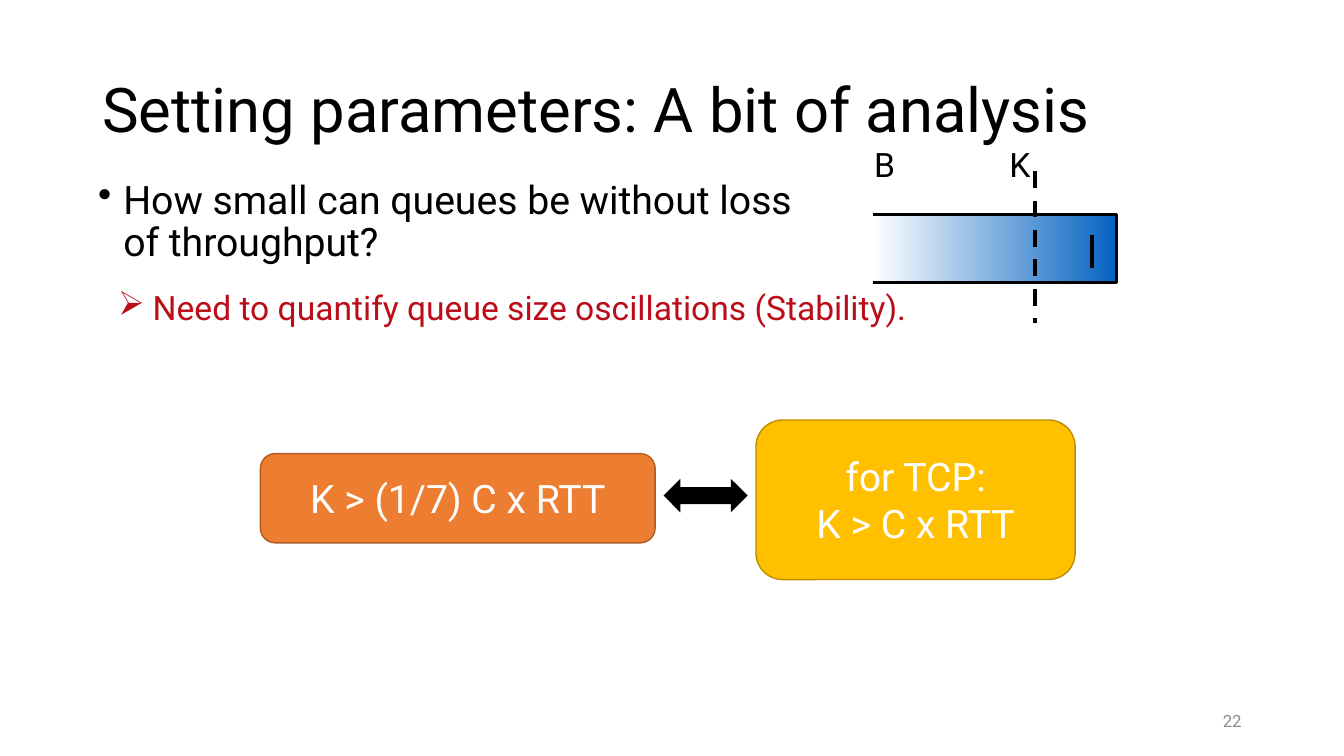
from dataclasses import dataclass, field
from typing import Any

from lxml import etree
from pptx import Presentation
from pptx import util as u
from pptx.dml.color import RGBColor
from pptx.enum import dml, shapes, text
from pptx.oxml.ns import qn

PX = 9525
FONT = "Roboto"
COLORS = {
    "black": "000000",
    "white": "FFFFFF",
    "gray": "8C8C8C",
    "red": "BB0D18",
    "blue": "0563C1",
    "orange": "ED7D31",
    "orange_edge": "AF5C24",
    "gold": "FFC000",
    "gold_edge": "BD8E00",
}


@dataclass
class Label:
    box: tuple[int, int, int, int]
    lines: list[str]
    size: int
    color: str = "black"
    frame: dict[str, Any] = field(default_factory=dict)
    format: dict[str, Any] = field(default_factory=dict)
    bullet: str = ""
    indent: int = 0


@dataclass
class Block:
    kind: shapes.MSO_SHAPE
    fill: str
    edge: str
    label: Label


@dataclass
class Stroke:
    start: tuple[int, int]
    end: tuple[int, int]
    width: float
    dash: dml.MSO_LINE | None = None


MIDDLE = {"vertical_anchor": text.MSO_ANCHOR.MIDDLE}
UNWRAPPED = {"word_wrap": False}
CENTER = {"alignment": text.PP_ALIGN.CENTER}
TIGHT = {"line_spacing": 0.9}

BLOCKS = [
    Block(shapes.MSO_SHAPE.ROUNDED_RECTANGLE, "orange", "orange_edge",
          Label((248, 432, 376, 85), ["K > (1/7) C x RTT"], 28, "white", MIDDLE, CENTER)),
    Block(shapes.MSO_SHAPE.ROUNDED_RECTANGLE, "gold", "gold_edge",
          Label((720, 400, 304, 152), ["for TCP:", "K > C x RTT"], 28, "white", MIDDLE, CENTER)),
    Block(shapes.MSO_SHAPE.LEFT_RIGHT_ARROW, "black", "",
          Label((632, 456, 80, 32), [], 28)),
]
LABELS = [
    Label((904, 667, 288, 38), ["22"], 12, "gray", MIDDLE,
          {"alignment": text.PP_ALIGN.RIGHT}),
    Label((88, 38, 1104, 139), ["Setting parameters: A bit of analysis"], 44,
          frame=MIDDLE, format=TIGHT),
    Label((823, 132, 38, 48), ["B"], 24, frame=UNWRAPPED),
    Label((952, 132, 38, 48), ["K"], 24, frame=UNWRAPPED),
    Label((84, 167, 703, 176), ["How small can queues be without loss of throughput?"], 28,
          format=TIGHT | {"space_before": u.Pt(10)}, bullet="•", indent=24),
    Label((103, 269, 809, 48), ["Need to quantify queue size oscillations (Stability)."], 24,
          "red", bullet="➢", indent=33),
]
QUEUE_OUTLINE = [(831, 204), (1063, 204), (1063, 269), (831, 269)]
STROKES = [
    Stroke((1040, 224), (1040, 255), 2.25),
    Stroke((986, 163), (986, 308), 3, dml.MSO_LINE.DASH),
]


def rgb(name: str) -> RGBColor:
    return RGBColor.from_string(COLORS[name])


def emu(lengths: tuple[int, ...]) -> list[int]:
    return [length * PX for length in lengths]


def apply(target: Any, values: dict[str, Any]) -> None:
    for name, value in values.items():
        setattr(target, name, value)


def set_line(line: Any, color: str, width: float) -> None:
    line.color.rgb = rgb(color)
    line.width = u.Pt(width)


def write(shape: Any, label: Label) -> None:
    frame = shape.text_frame
    apply(frame, {"word_wrap": True} | label.frame)
    for index, line in enumerate(label.lines):
        paragraph = frame.add_paragraph() if index else frame.paragraphs[0]
        run = paragraph.add_run()
        run.text = line
        apply(run.font, {"name": FONT, "size": u.Pt(label.size)})
        run.font.color.rgb = rgb(label.color)
        apply(paragraph, label.format)
        if label.bullet:
            properties = paragraph._p.get_or_add_pPr()
            properties.set("marL", str(label.indent * PX))
            properties.set("indent", str(-label.indent * PX))
            etree.SubElement(properties, qn("a:buChar")).set("char", label.bullet)


def draw_block(slide: Any, block: Block) -> None:
    shape = slide.shapes.add_shape(block.kind, *emu(block.label.box))
    shape.shadow.inherit = False
    shape.fill.solid()
    shape.fill.fore_color.rgb = rgb(block.fill)
    if block.edge:
        set_line(shape.line, block.edge, 1)
    else:
        shape.line.fill.background()
    write(shape, block.label)


def draw_queue(slide: Any) -> None:
    builder = slide.shapes.build_freeform(*QUEUE_OUTLINE[0], scale=PX)
    builder.add_line_segments(QUEUE_OUTLINE[1:], close=False)
    queue = builder.convert_to_shape()
    queue.shadow.inherit = False
    queue.fill.gradient()
    queue.fill.gradient_angle = 0
    for stop, color in zip(queue.fill.gradient_stops, ("white", "blue")):
        stop.color.rgb = rgb(color)
    set_line(queue.line, "black", 2.25)


def draw_stroke(slide: Any, stroke: Stroke) -> None:
    connector = slide.shapes.add_connector(
        shapes.MSO_CONNECTOR.STRAIGHT, *emu(stroke.start + stroke.end))
    set_line(connector.line, "black", stroke.width)
    if stroke.dash:
        connector.line.dash_style = stroke.dash
    etree.SubElement(connector._element.spPr, qn("a:effectLst"))


def main() -> None:
    presentation = Presentation()
    apply(presentation, {"slide_width": 1280 * PX, "slide_height": 720 * PX})
    slide = presentation.slides.add_slide(presentation.slide_layouts[6])
    for block in BLOCKS:
        draw_block(slide, block)
    draw_queue(slide)
    for stroke in STROKES:
        draw_stroke(slide, stroke)
    for label in LABELS:
        write(slide.shapes.add_textbox(*emu(label.box)), label)
    presentation.save("out.pptx")


if __name__ == "__main__":
    main()
